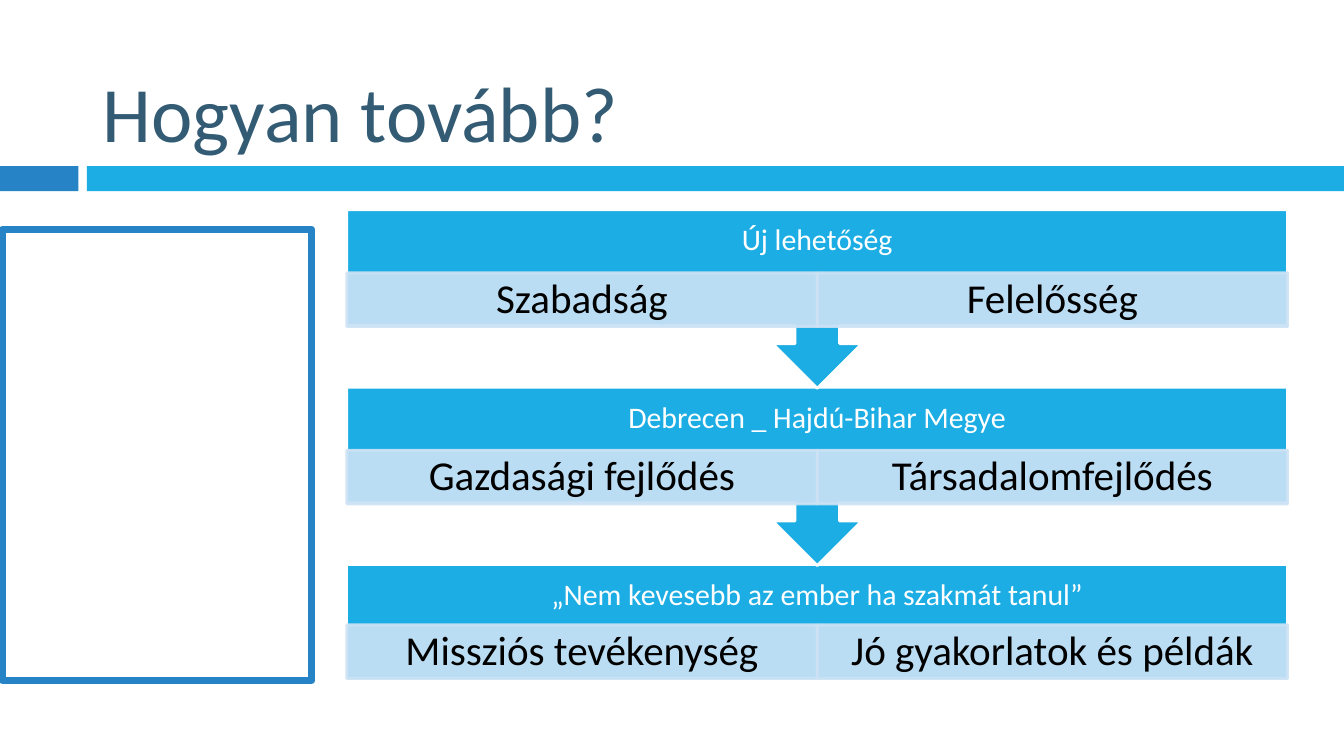
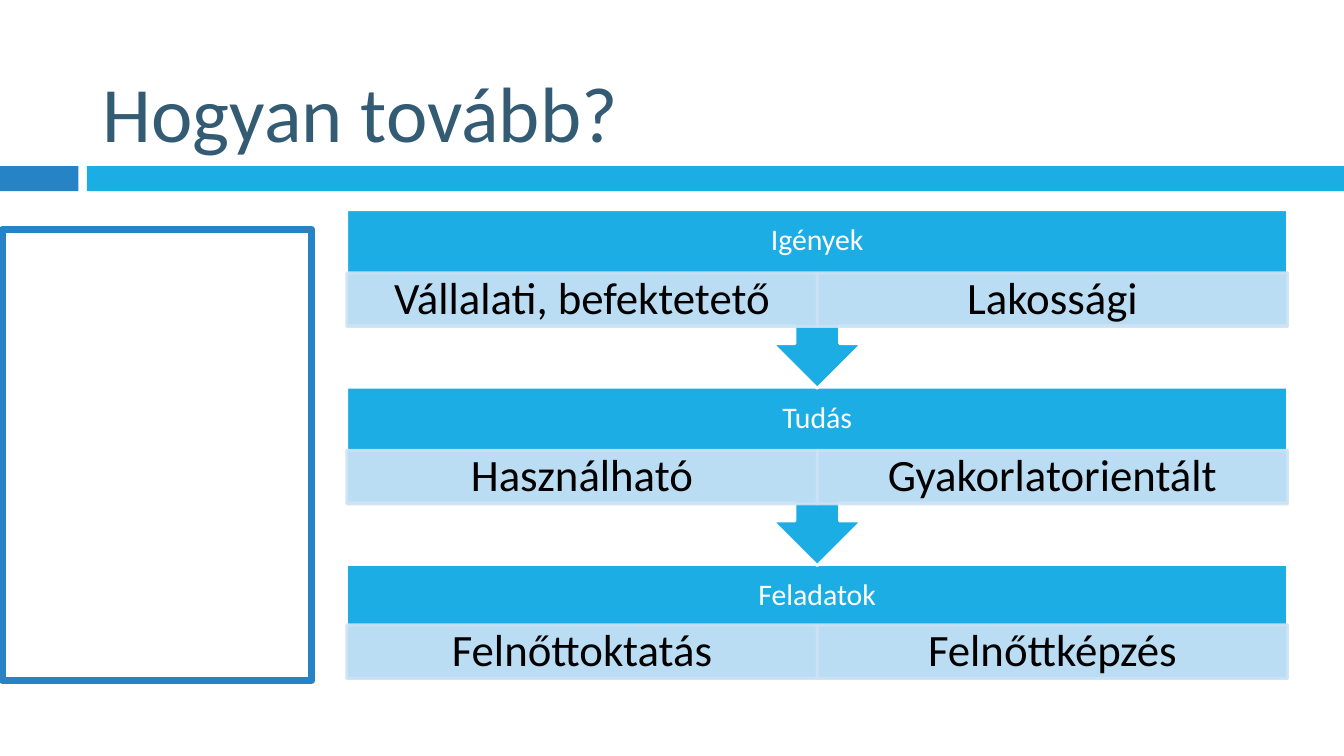
from lxml.etree import SubElement
from pptx import Presentation
from pptx.dml.color import RGBColor
from pptx.enum.shapes import MSO_SHAPE
from pptx.enum.text import MSO_ANCHOR, PP_ALIGN
from pptx.oxml.ns import qn
from pptx.util import Pt

COLORS = {
    "blue": "2683C6",
    "cyan": "1CADE4",
    "pale": "CDE3F5",
    "title": "335B74",
    "white": "FFFFFF",
    "black": "000000",
}
TITLE = "Hogyan tovább?"
SLIDES = [
    (22, 12.2, [
        ("Új lehetőség", ["Szabadság", "Felelősség"]),
        ("Debrecen _ Hajdú-Bihar Megye", ["Gazdasági fejlődés", "Társadalomfejlődés"]),
        ("„Nem kevesebb az ember ha szakmát tanul”",
         ["Missziós tevékenység", "Jó gyakorlatok és példák"]),
    ]),
    (24, 13.7, [
        ("Igények", ["Vállalati, befektetető", "Lakossági"]),
        ("Tudás", ["Használható", "Gyakorlatorientált"]),
        ("Feladatok", ["Felnőttoktatás", "Felnőttképzés"]),
    ]),
]
LEFT, TOP, WIDTH, PITCH = 185.8, 112.4, 504, 95
HEADER_H, CELL_H = 33.8, 28.8


def add_box(slide, kind, x, y, w, h, fill, line=None, line_width=1.5, alpha=None):
    sp = slide.shapes.add_shape(kind, Pt(x), Pt(y), Pt(w), Pt(h))
    sp.shadow.inherit = False
    sp.fill.solid()
    sp.fill.fore_color.rgb = RGBColor.from_string(COLORS[fill])
    if line:
        sp.line.color.rgb = RGBColor.from_string(COLORS[line])
        sp.line.width = Pt(line_width)
    else:
        sp.line.fill.background()
    if alpha:
        for clr in sp._element.spPr.iter(qn("a:srgbClr")):
            SubElement(clr, qn("a:alpha"), val=str(alpha * 1000))
    return sp


def set_text(sp, text, size, color, inset_x, inset_y, align=PP_ALIGN.CENTER,
             anchor=MSO_ANCHOR.MIDDLE, spacing=0.9):
    tf = sp.text_frame
    tf.word_wrap = True
    tf.vertical_anchor = anchor
    tf.margin_left = tf.margin_right = Pt(inset_x)
    tf.margin_top = tf.margin_bottom = Pt(inset_y)
    p = tf.paragraphs[0]
    p.text = text
    p.alignment = align
    p.line_spacing = spacing
    p.font.name = "Calibri"
    p.font.size = Pt(size)
    p.font.color.rgb = RGBColor.from_string(COLORS[color])


prs = Presentation()
prs.slide_width, prs.slide_height = Pt(720), Pt(405)

for cell_size, cell_inset, steps in SLIDES:
    slide = prs.slides.add_slide(prs.slide_layouts[6])
    add_box(slide, MSO_SHAPE.RECTANGLE, 0, 89, 42, 13.5, "blue")
    add_box(slide, MSO_SHAPE.RECTANGLE, 46.6, 89, 673.4, 13.5, "cyan")
    title = slide.shapes.add_textbox(Pt(48), Pt(6), Pt(636), Pt(82.5))
    set_text(title, TITLE, 42, "title", 7.2, 3.6, PP_ALIGN.LEFT, MSO_ANCHOR.BOTTOM, 1.0)
    add_box(slide, MSO_SHAPE.RECTANGLE, 1.4, 123, 165.6, 241.5, "white", "blue", 4)

    for i, (header, cells) in reversed(list(enumerate(steps))):
        y = TOP + i * PITCH
        last = i == len(steps) - 1
        kind = MSO_SHAPE.RECTANGLE if last else MSO_SHAPE.UP_ARROW_CALLOUT
        block = add_box(slide, kind, LEFT, y, WIDTH, 62 if last else 95.6, "cyan", "white")
        if not last:
            block.rotation = 180
        label = slide.shapes.add_textbox(Pt(LEFT), Pt(y), Pt(WIDTH), Pt(HEADER_H))
        set_text(label, header, 16, "white", 8.6, 8.6)
        cell_y = y + (32.4 if last else HEADER_H)
        cell_w = WIDTH / len(cells)
        for j, text in enumerate(cells):
            cell = add_box(slide, MSO_SHAPE.RECTANGLE, LEFT + j * cell_w, cell_y,
                           cell_w, CELL_H, "pale", "pale", alpha=90)
            set_text(cell, text, cell_size, "black", cell_inset, 2.2)

prs.save("out.pptx")
